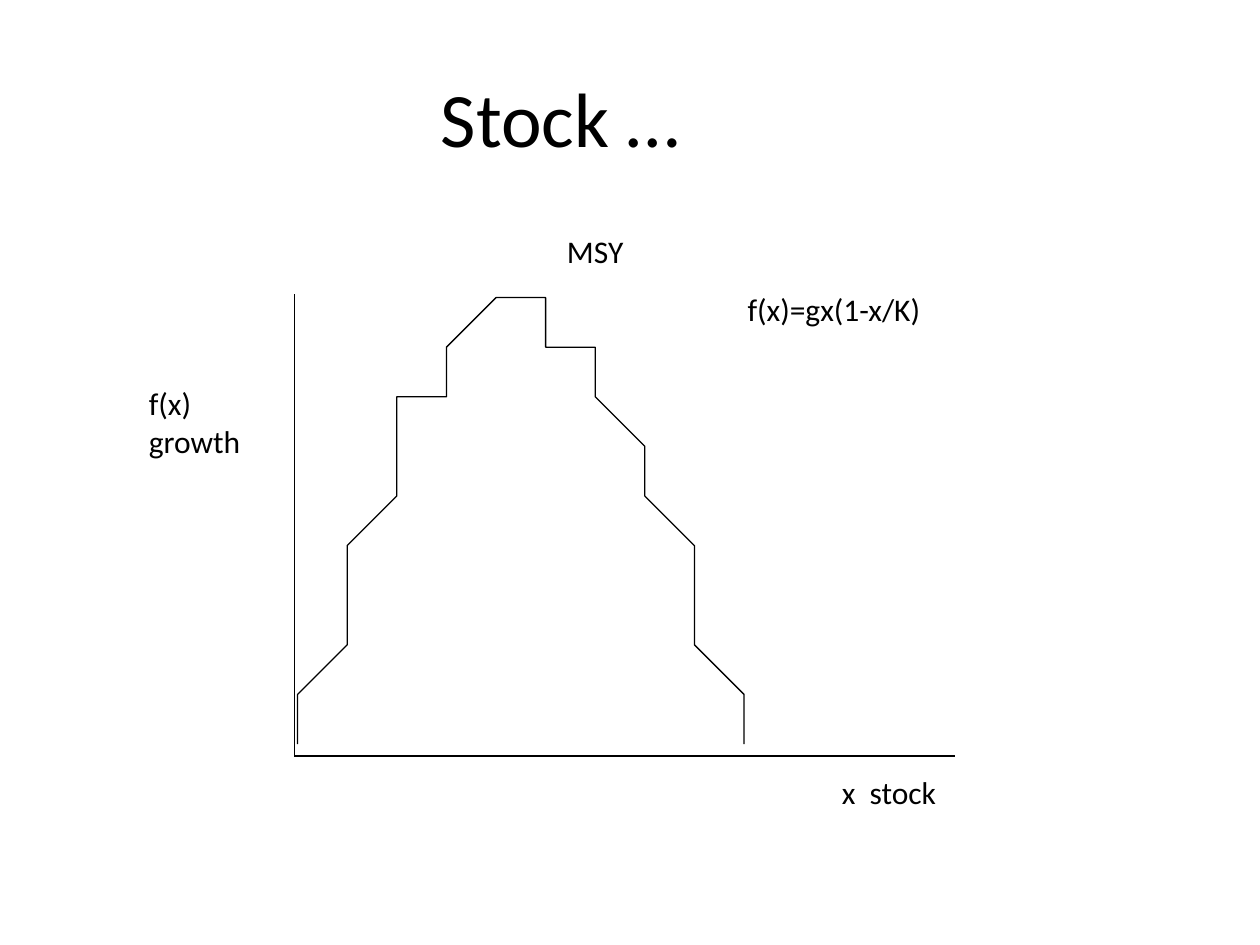
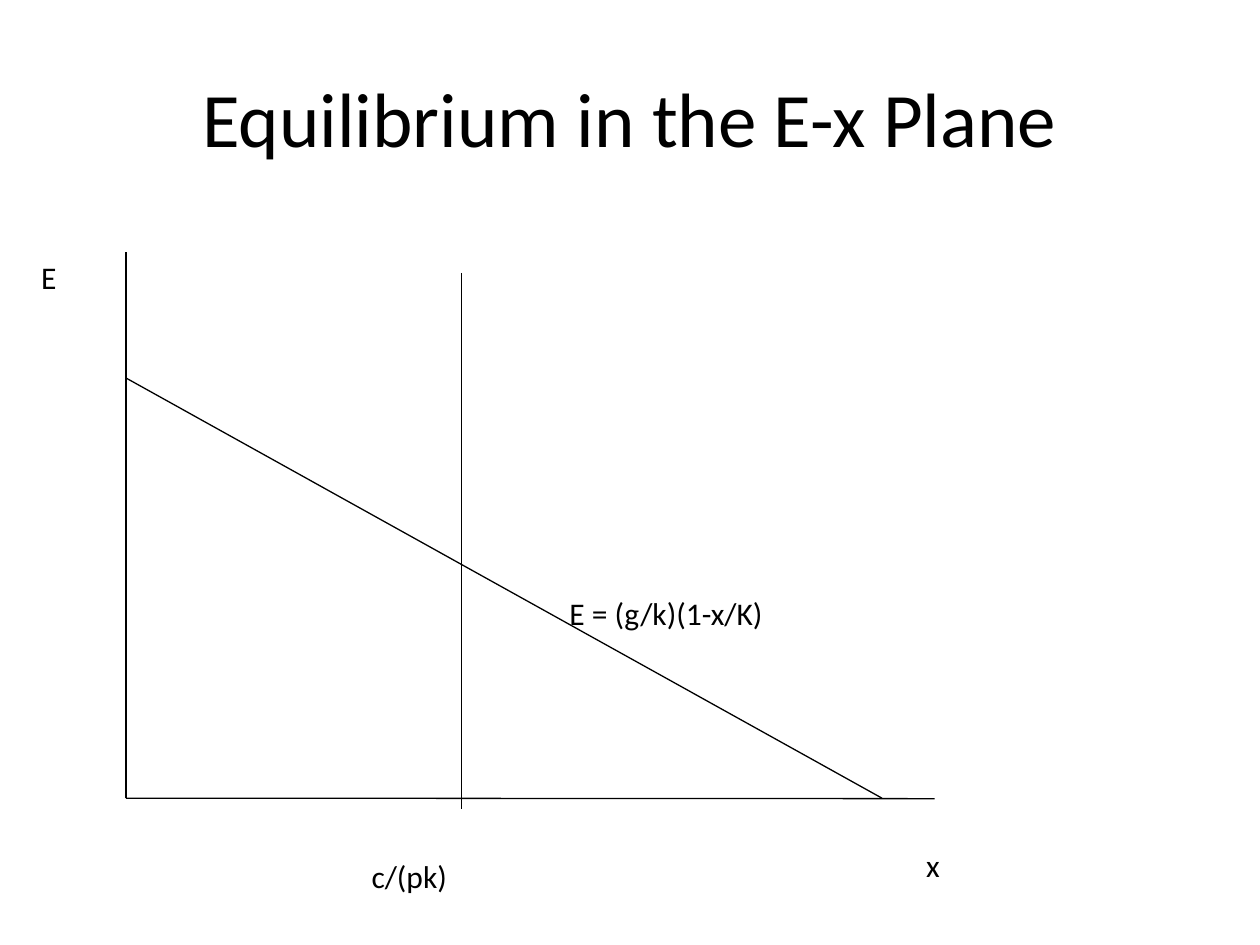
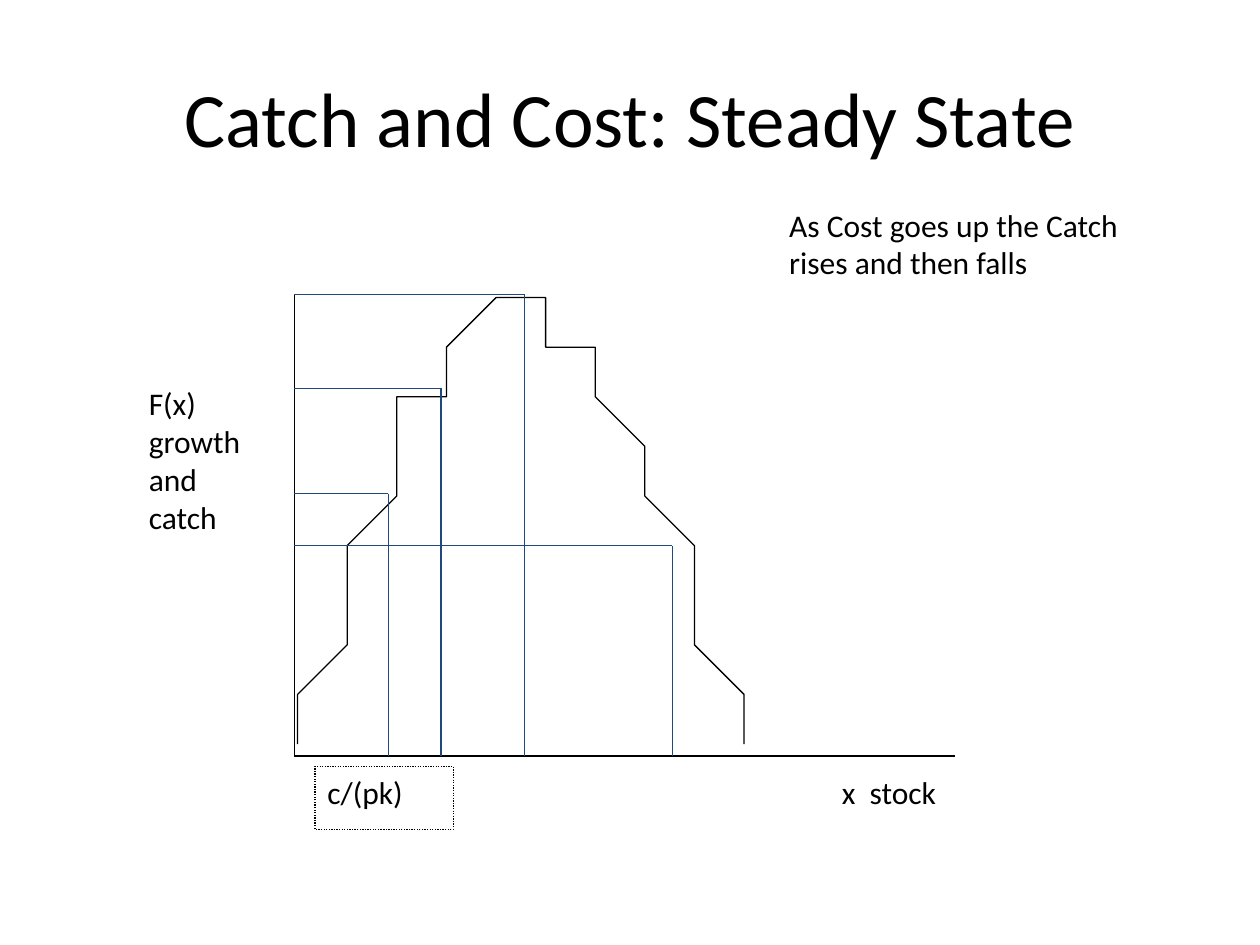
from dataclasses import dataclass

from lxml import etree
from pptx import Presentation
from pptx import util as u
from pptx.dml.color import RGBColor
from pptx.enum import dml, shapes, text
from pptx.oxml import ns
from pptx.util import Cm

COLORS = {"ink": "000000", "guide": "1F497D"}
FONT = "Calibri"
LINE_WIDTH = u.Pt(0.75)
TITLE_ONLY = 5

# Growth graph, in centimetres
LEFT, TOP, BASE = 5.93, 5.93, 15.24
PEAK_X, CAPACITY_X, AXIS_END = 10.58, 15.24, 19.26
CURVE = [
    [(LEFT, BASE), (7.48, 10.58), (9.03, TOP), (PEAK_X, TOP)],
    [(PEAK_X, TOP), (12.13, TOP), (14.5, 13.69), (CAPACITY_X, BASE)],
]
CURVE_STEPS = 30

Point = tuple[float, float]


@dataclass
class Label:
    text: str
    left: float
    top: float
    width: float
    height: float = 1.27
    dotted: bool = False


@dataclass
class Line:
    start: Point
    end: Point
    color: str = "ink"


STOCK_LABEL = Label("x  stock", 16.72, 15.45, 3.4)

STOCK_LABELS = [
    Label("f(x)\ngrowth", 2.75, 7.62, 3.15, 2.31),
    STOCK_LABEL,
    Label("MSY", 11.18, 4.55, 2.13),
    Label("f(x)=gx(1-x/K)", 14.82, 5.72, 7.62),
]

PLANE_LINES = [
    Line((2.54, 5.08), (2.54, 16.09)),
    Line((2.54, 16.09), (18.84, 16.1)),
    Line((9.31, 5.5), (9.31, 16.3)),
    Line((2.54, 7.62), (17.78, 16.09)),
]
PLANE_LABELS = [
    Label("c/(pk)", 7.24, 17.15, 2.8),
    Label("x", 18.42, 16.93, 0.95),
    Label("E", 0.58, 5.08, 0.99),
    Label("E = (g/k)(1-x/K)", 11.23, 11.85, 6.7),
]

CATCH_LABELS = [
    Label("F(x)\ngrowth\nand\ncatch", 2.75, 7.62, 3.12, 4.32),
    STOCK_LABEL,
    Label("c/(pk)", 6.35, 15.45, 2.79, dotted=True),
    Label("As Cost goes up the Catch rises and then falls", 15.66, 4.02, 7.2, 3.3),
]
CATCH_POINTS = [(7.83, 9.95), (8.89, 7.83), (PEAK_X, TOP), (13.55, 11.0)]


def rgb(name: str) -> RGBColor:
    return RGBColor.from_string(COLORS[name])


def format_text(tf, size: float) -> None:
    for p in tf.paragraphs:
        for r in p.runs:
            r.font.name = FONT
            r.font.size = u.Pt(size)
            r.font.color.rgb = rgb("ink")


def format_line(line, color: str = "ink") -> None:
    line.color.rgb = rgb(color)
    line.width = LINE_WIDTH


def add_titled_slide(prs, title: str, extra_right: float = 0):
    """Add a slide; extra_right widens the title's right margin."""
    s = prs.slides.add_slide(prs.slide_layouts[TITLE_ONLY])
    sp = s.shapes.title
    sp.left, sp.top, sp.width, sp.height = Cm(1.27), Cm(0.76), Cm(22.86), Cm(3.18)
    tf = sp.text_frame
    tf.text = title
    tf.vertical_anchor = text.MSO_ANCHOR.MIDDLE
    tf.margin_right = Cm(0.25 + extra_right)
    tf.paragraphs[0].alignment = text.PP_ALIGN.CENTER
    format_text(tf, 44)
    return s


def add_line(parent, line: Line) -> None:
    cx = parent.add_connector(
        shapes.MSO_CONNECTOR.STRAIGHT, *(Cm(v) for v in line.start + line.end)
    )
    format_line(cx.line, line.color)
    etree.SubElement(cx._element.spPr, ns.qn("a:effectLst"))


def add_label(s, label: Label) -> None:
    box = [Cm(v) for v in (label.left, label.top, label.width, label.height)]
    if label.dotted:
        sp = s.shapes.add_shape(shapes.MSO_SHAPE.RECTANGLE, *box)
        sp.shadow.inherit = False
        sp.fill.background()
        format_line(sp.line)
        sp.line.dash_style = dml.MSO_LINE.ROUND_DOT
    else:
        sp = s.shapes.add_textbox(*box)
    tf = sp.text_frame
    tf.word_wrap = True
    tf.vertical_anchor = text.MSO_ANCHOR.TOP
    tf.text = label.text
    for p in tf.paragraphs:
        p.alignment = text.PP_ALIGN.LEFT
    format_text(tf, 18)


def bezier(points: list[Point], t: float) -> Point:
    weights = ((1 - t) ** 3, 3 * t * (1 - t) ** 2, 3 * t * t * (1 - t), t**3)
    x, y = (sum(w * v for w, v in zip(weights, axis)) for axis in zip(*points))
    return x, y


def add_growth_graph(s) -> None:
    add_line(s.shapes, Line((LEFT, TOP), (LEFT, BASE)))
    add_line(s.shapes, Line((LEFT, BASE), (AXIS_END, BASE)))
    points = [
        bezier(part, i / CURVE_STEPS)
        for part in CURVE
        for i in range(1, CURVE_STEPS + 1)
    ]
    builder = s.shapes.build_freeform(LEFT, BASE, scale=Cm(1))
    builder.add_line_segments(points, close=False)
    sp = builder.convert_to_shape()
    sp.shadow.inherit = False
    sp.fill.background()
    format_line(sp.line)


def add_guides(s, corner: Point) -> None:
    """Draw a group of lines from a point to both axes."""
    group = s.shapes.add_group_shape()
    x, y = corner
    for end in ((x, BASE), (LEFT, y)):
        add_line(group.shapes, Line(corner, end, "guide"))


def add_labels(s, labels: list[Label]) -> None:
    for label in labels:
        add_label(s, label)


def main() -> None:
    prs = Presentation()
    prs.slide_width, prs.slide_height = Cm(25.4), Cm(19.05)

    s = add_titled_slide(prs, "Stock …", extra_right=2.8)
    add_growth_graph(s)
    add_labels(s, STOCK_LABELS)

    s = add_titled_slide(prs, "Equilibrium in the E-x Plane")
    for line in PLANE_LINES:
        add_line(s.shapes, line)
    add_labels(s, PLANE_LABELS)

    s = add_titled_slide(prs, "Catch and Cost: Steady State")
    add_growth_graph(s)
    add_labels(s, CATCH_LABELS)
    for corner in CATCH_POINTS:
        add_guides(s, corner)

    prs.save("out.pptx")


if __name__ == "__main__":
    main()
